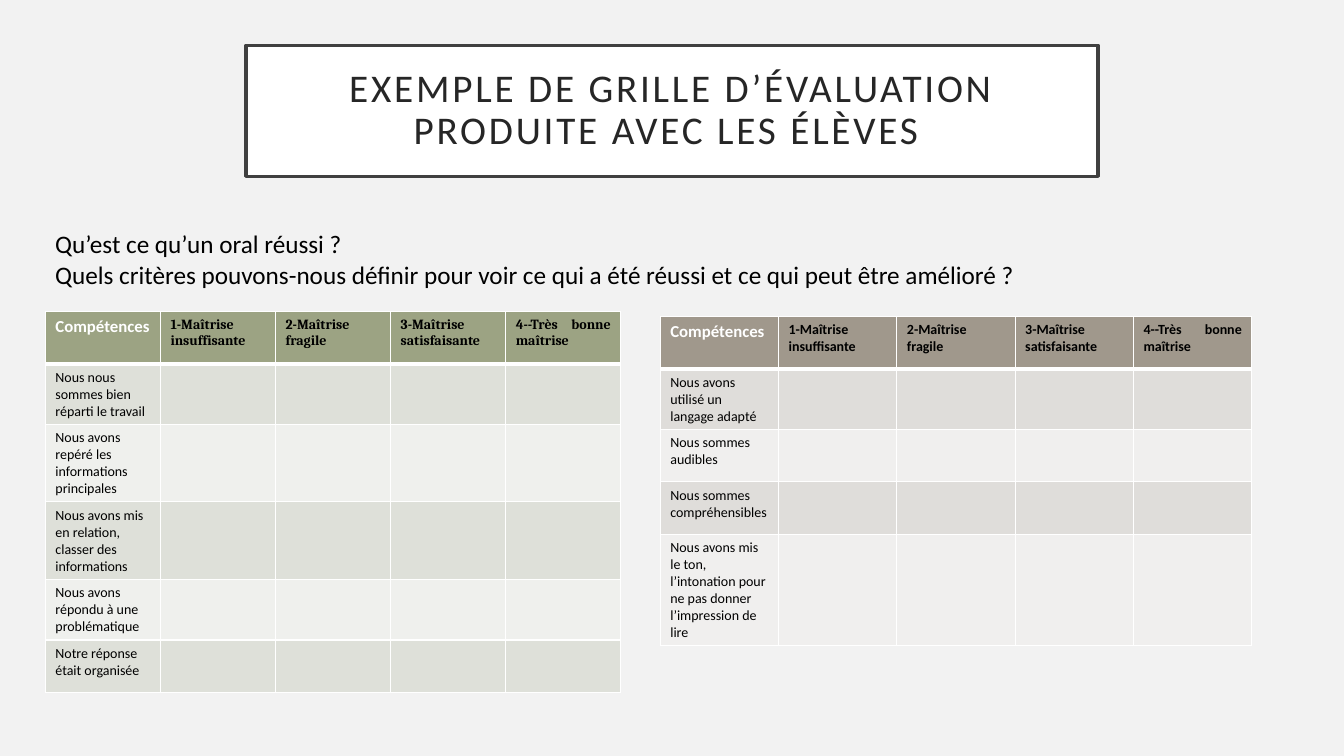
from lxml import etree
from pptx import Presentation
from pptx.dml.color import RGBColor
from pptx.enum.shapes import MSO_SHAPE
from pptx.enum.text import MSO_ANCHOR, MSO_AUTO_SIZE, PP_ALIGN
from pptx.oxml.ns import qn
from pptx.util import Inches, Pt

RECTANGLE = MSO_SHAPE.RECTANGLE
MIDDLE = MSO_ANCHOR.MIDDLE
FIT_SHAPE = MSO_AUTO_SIZE.SHAPE_TO_FIT_TEXT
LEFT, CENTER, JUSTIFY = PP_ALIGN.LEFT, PP_ALIGN.CENTER, PP_ALIGN.JUSTIFY

# Grid: square units of a tenth of an inch
COLUMNS, ROWS = 133.33, 75
MARGIN = 4.5

LEVELS = ["1-Maîtrise insuffisante", "2-Maîtrise fragile",
          "3-Maîtrise satisfaisante", "4--Très bonne maîtrise"]
TEAMWORK = ["Nous nous sommes bien réparti le travail",
            "Nous avons repéré les informations principales",
            "Nous avons mis en relation, classer des informations",
            "Nous avons répondu à une problématique",
            "Notre réponse était organisée"]
SPEAKING = ["Nous avons utilisé un langage adapté",
            "Nous sommes audibles",
            "Nous sommes compréhensibles",
            "Nous avons mis le ton, l’intonation pour ne pas donner l’impression de lire"]


def grid(units):
    return Inches(units / 10)


def color(value):
    return RGBColor.from_string(value)


class EvaluationSlide:
    font = "Calibri"
    black, white, ink, frame = "000000", "FFFFFF", "262626", "404040"

    def __init__(self, deck, background):
        self.slide = deck.slides.add_slide(deck.slide_layouts[6])
        fill = self.slide.background.fill
        fill.solid()
        fill.fore_color.rgb = color(background)

    def set_text(self, para, text, size, shade, align=LEFT, bold=False, font=None):
        para.text = text
        para.alignment = align
        para.font.name = font or self.font
        para.font.size = Pt(size)
        para.font.bold = bold
        para.font.color.rgb = color(shade)

    def title(self, text, top, width, height):
        left = (COLUMNS - width) / 2
        box = self.slide.shapes.add_shape(
            RECTANGLE, grid(left), grid(top), grid(width), grid(height))
        box.shadow.inherit = False
        box.fill.solid()
        box.fill.fore_color.rgb = color(self.white)
        box.line.color.rgb = color(self.frame)
        box.line.width = Pt(2.5)
        frame = box.text_frame
        frame.word_wrap = True
        frame.vertical_anchor = MIDDLE
        frame.margin_left = frame.margin_right = grid(2)
        frame.margin_top = frame.margin_bottom = grid(2)
        para = frame.paragraphs[0]
        self.set_text(para, text, 28, self.ink, CENTER)
        para.line_spacing = 0.9
        # Letter spacing, in hundredths of a point
        para.runs[0].font._element.set("spc", "200")

    def questions(self, lines, left, top, width, height):
        box = self.slide.shapes.add_textbox(
            grid(left), grid(top), grid(width), grid(height))
        frame = box.text_frame
        frame.word_wrap = False
        frame.auto_size = FIT_SHAPE
        for index, line in enumerate(lines):
            para = frame.add_paragraph() if index else frame.paragraphs[0]
            self.set_text(para, line, 18, self.black)

    def borders(self, cell, top, bottom):
        properties = cell._tc.get_or_add_tcPr()
        for side, width in (("L", 1), ("R", 1), ("T", top), ("B", bottom)):
            line = etree.SubElement(properties, qn(f"a:ln{side}"), w=str(Pt(width)))
            fill = etree.SubElement(line, qn("a:solidFill"))
            etree.SubElement(fill, qn("a:srgbClr"), val=self.white)

    def criteria_table(self, criteria, left, top, width, fills, level_font=None):
        header_fill, *bands = fills
        row_height = 5.2
        rows, columns = len(criteria) + 1, len(LEVELS) + 1
        table = self.slide.shapes.add_table(
            rows, columns, grid(left), grid(top),
            grid(width), grid(row_height * rows)).table
        for column in table.columns:
            column.width = grid(width / columns)

        # Borders and fills
        for row in range(rows):
            for column in range(columns):
                cell = table.cell(row, column)
                self.borders(cell, 3 if row == 1 else 1, 3 if row == 0 else 1)
                cell.fill.solid()
                shade = bands[(row - 1) % 2] if row else header_fill
                cell.fill.fore_color.rgb = color(shade)

        # Header row
        self.set_text(table.cell(0, 0).text_frame.paragraphs[0],
                      "Compétences", 12, self.white, bold=True)
        for column, level in enumerate(LEVELS, 1):
            self.set_text(table.cell(0, column).text_frame.paragraphs[0],
                          level, 10, self.black, JUSTIFY, True, level_font)

        # Criteria column
        for row, criterion in enumerate(criteria, 1):
            self.set_text(table.cell(row, 0).text_frame.paragraphs[0],
                          criterion, 10, self.black)


def main():
    deck = Presentation()
    deck.slide_width, deck.slide_height = grid(COLUMNS), grid(ROWS)
    page = EvaluationSlide(deck, "F2F2F2")

    # Title and opening questions
    page.title("EXEMPLE DE GRILLE D’ÉVALUATION PRODUITE AVEC LES ÉLÈVES ",
               4.5, 84.5, 13)
    page.questions(
        ["Qu’est ce qu’un oral réussi ?",
         "Quels critères pouvons-nous définir pour voir ce qui a été réussi "
         "et ce qui peut être amélioré ?"],
        MARGIN, 22.2, 98.4, 7.1)

    # Evaluation grids
    page.criteria_table(TEAMWORK, MARGIN, 30.9, 57.1,
                        ("9CA383", "DEE0D9", "EFF0ED"), "Cambria")
    page.criteria_table(SPEAKING, 65.5, 31.4, 58.7,
                        ("A0988C", "DFDDDA", "F0EFEE"))

    deck.save("out.pptx")


if __name__ == "__main__":
    main()
